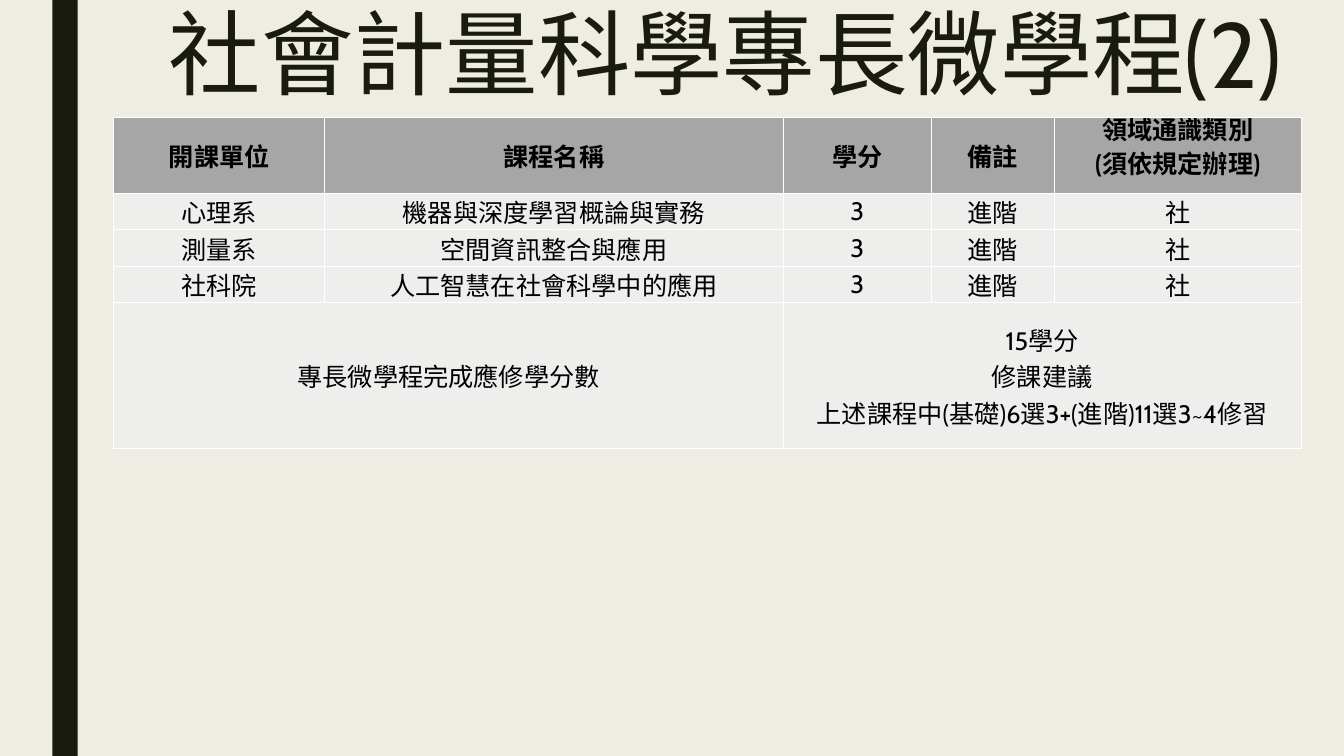
from lxml import etree
from pptx import Presentation
from pptx.enum import shapes, text
from pptx.oxml import ns
from pptx.util import Cm, Pt
from pptx.dml.color import RGBColor

# Content
TITLE = "社會計量科學專長微學程(2)"
HEADER = ["開課單位", "課程名稱", "學分", "備註", "領域通識類別\n(須依規定辦理)"]
COURSES = [
    ("心理系", "機器與深度學習概論與實務", "3", "進階", "社"),
    ("測量系", "空間資訊整合與應用", "3", "進階", "社"),
    ("社科院", "人工智慧在社會科學中的應用", "3", "進階", "社"),
]
TOTAL_LABEL = "專長微學程完成應修學分數"
TOTAL_TEXT = "15學分\n修課建議\n上述課程中(基礎)6選3+(進階)11選3~4修習"
SUMMARY = [TOTAL_LABEL, "", TOTAL_TEXT, "", ""]

COLUMN_WIDTHS = [Cm(5.31), Cm(11.56), Cm(3.73), Cm(3.1), Cm(6.22)]
ROW_HEIGHTS = [Cm(1.9)] + [Cm(0.74)] * len(COURSES) + [Cm(1.68)]
COLORS = {"background": "EFEDE3", "dark": "191B0E", "header": "A6A6A6",
          "body": "EEEEED", "text": "000000", "border": "FFFFFF"}
LATIN_FONT, ASIAN_FONT = "Cabin", "Noto Sans CJK SC"


def paint(fill, name):
    fill.solid()
    fill.fore_color.rgb = RGBColor.from_string(COLORS[name])


def add_run(paragraph, words, size, color, bold=False):
    paragraph.alignment = text.PP_ALIGN.CENTER
    run = paragraph.add_run()
    run.text = words
    run.font.name, run.font.size, run.font.bold = LATIN_FONT, Pt(size), bold
    run.font.color.rgb = RGBColor.from_string(COLORS[color])
    asian = etree.Element(ns.qn("a:ea"), typeface=ASIAN_FONT)
    run.font._element.find(ns.qn("a:latin")).addnext(asian)


def add_borders(cell):
    properties = cell._tc.get_or_add_tcPr()
    for position, side in enumerate(("lnL", "lnR", "lnT", "lnB")):
        line = etree.Element(ns.qn(f"a:{side}"), w=str(Pt(1)))
        fill = etree.SubElement(line, ns.qn("a:solidFill"))
        etree.SubElement(fill, ns.qn("a:srgbClr"), val=COLORS["border"])
        properties.insert(position, line)


def fill_cell(cell, words, is_header):
    cell.margin_left = cell.margin_right = Cm(0.16)
    cell.margin_top = cell.margin_bottom = 0
    cell.vertical_anchor = text.MSO_ANCHOR.MIDDLE
    paint(cell.fill, "header" if is_header else "body")
    add_borders(cell)
    lines = words.split("\n") if words else []
    for index, line in enumerate(lines):
        frame = cell.text_frame
        paragraph = frame.add_paragraph() if index else frame.paragraphs[0]
        add_run(paragraph, line, 18, "text", is_header)
        if is_header and len(lines) > 1:
            paragraph.line_spacing = Pt(12)
            paragraph.space_before = Pt(12 * index)


# Slide, background and side bar
presentation = Presentation()
presentation.slide_width, presentation.slide_height = Cm(33.87), Cm(19.05)
slide = presentation.slides.add_slide(presentation.slide_layouts[5])
paint(slide.background.fill, "background")
bar = slide.shapes.add_shape(shapes.MSO_SHAPE.RECTANGLE, Cm(1.32), 0,
                             Cm(0.64), presentation.slide_height)
bar.shadow.inherit = False
paint(bar.fill, "dark")
bar.line.fill.background()

# Title
title = slide.shapes.title
title.left, title.top, title.width, title.height = Cm(3.48), Cm(0.23), Cm(29.59), Cm(4.11)
frame = title.text_frame
frame.word_wrap = True
frame.auto_size = text.MSO_AUTO_SIZE.NONE
frame.vertical_anchor = text.MSO_ANCHOR.TOP
frame.margin_top = 0
frame.paragraphs[0].line_spacing = 0.89
add_run(frame.paragraphs[0], TITLE, 66, "dark")

# Course table
rows = [HEADER, *COURSES, SUMMARY]
table = slide.shapes.add_table(len(rows), len(HEADER), Cm(2.87), Cm(2.97),
                               sum(COLUMN_WIDTHS), sum(ROW_HEIGHTS)).table
for column, width in zip(table.columns, COLUMN_WIDTHS):
    column.width = width
for row, height in zip(table.rows, ROW_HEIGHTS):
    row.height = height
for row_index, row in enumerate(rows):
    for column_index, words in enumerate(row):
        fill_cell(table.cell(row_index, column_index), words, row_index == 0)

# Merged summary row
last = len(rows) - 1
for first_column, last_column in ((0, 1), (2, 4)):
    table.cell(last, first_column).merge(table.cell(last, last_column))

presentation.save("out.pptx")
